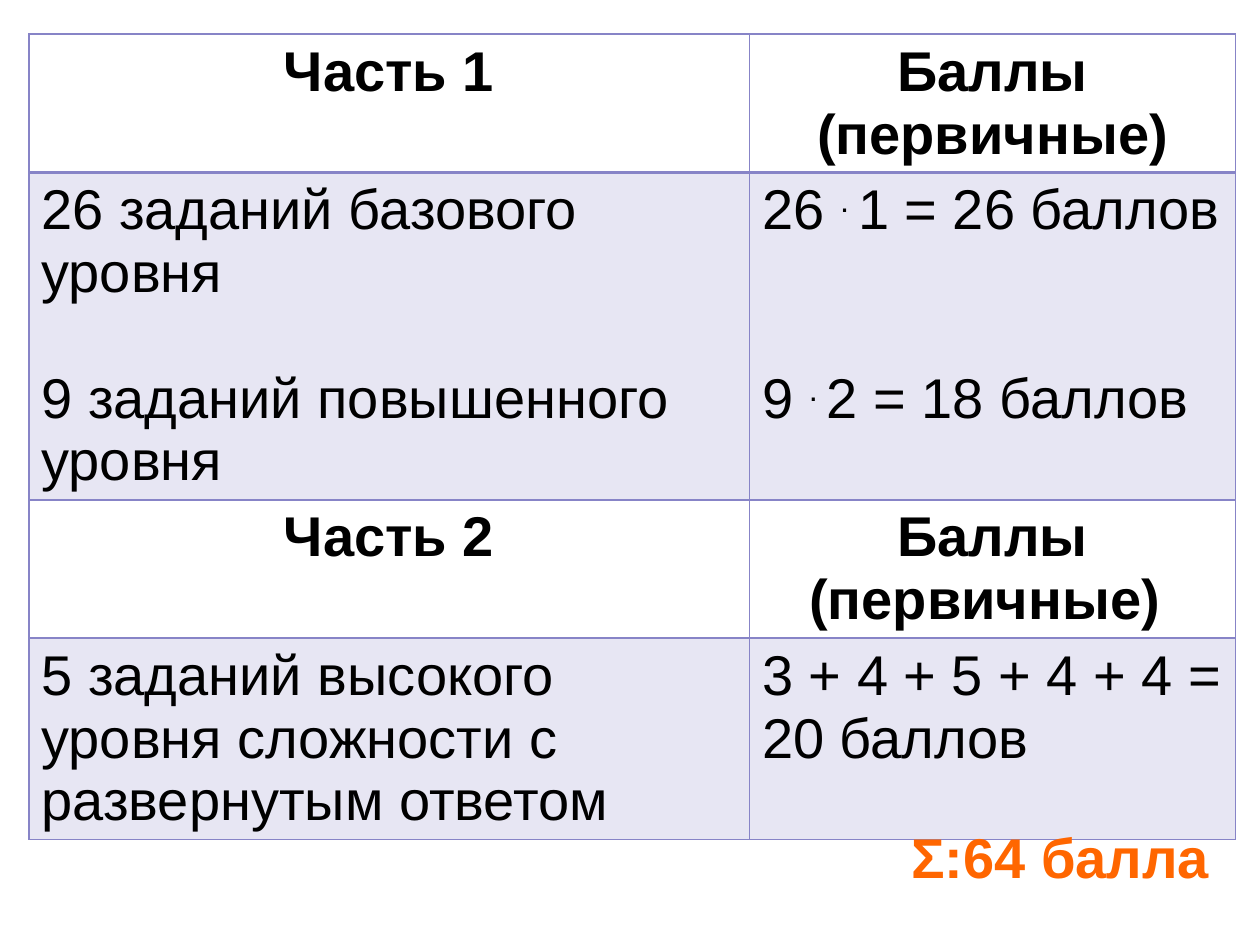
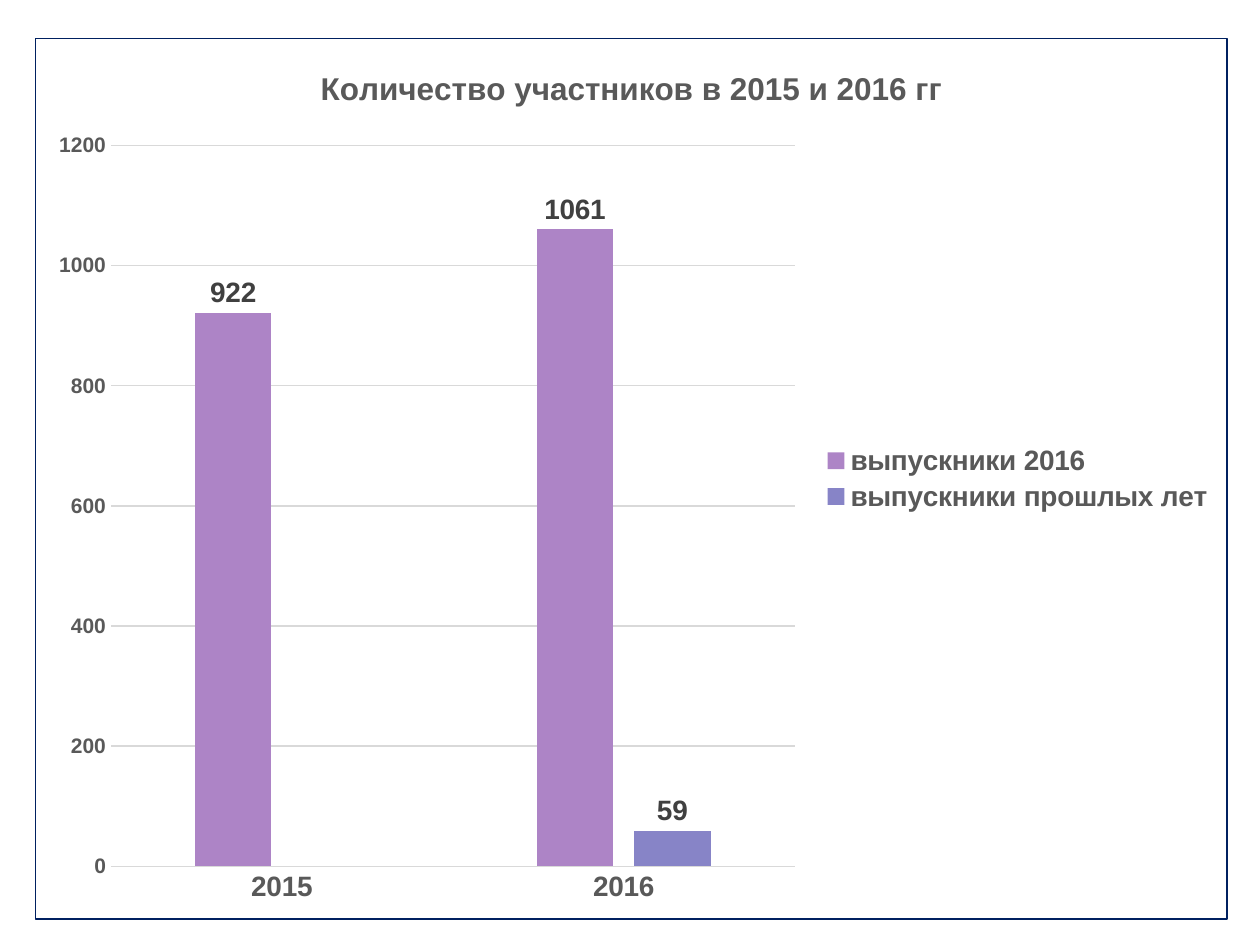
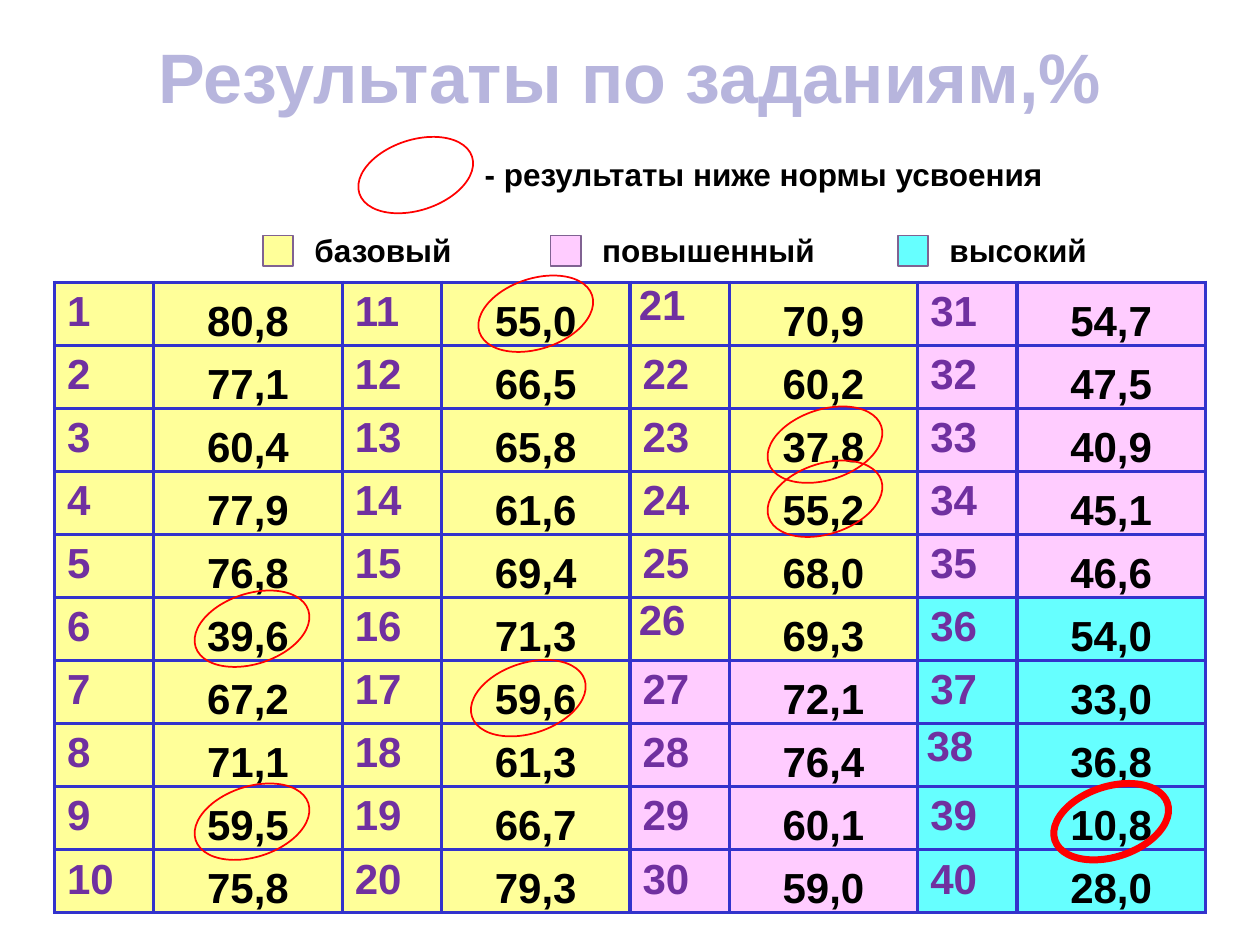
import pptx
import pptx.chart.data
import pptx.dml.color
import pptx.enum.chart
import pptx.enum.shapes
import pptx.enum.text
import pptx.oxml
import pptx.oxml.ns
import pptx.util

Cm = pptx.util.Cm
Pt = pptx.util.Pt
RGBColor = pptx.dml.color.RGBColor
qn = pptx.oxml.ns.qn
PP_ALIGN = pptx.enum.text.PP_ALIGN
MSO_ANCHOR = pptx.enum.text.MSO_ANCHOR
MSO_SHAPE = pptx.enum.shapes.MSO_SHAPE

FONT = "Arial"
BLACK = RGBColor(0x00, 0x00, 0x00)
VIOLET = RGBColor(0x87, 0x84, 0xC7)
MAUVE = RGBColor(0xAD, 0x84, 0xC6)
LAVENDER = RGBColor(0xB7, 0xB5, 0xDD)
ORANGE = RGBColor(0xFF, 0x66, 0x00)
NAVY = RGBColor(0x00, 0x20, 0x60)
DARK_GREY = RGBColor(0x40, 0x40, 0x40)
GREY = RGBColor(0x59, 0x59, 0x59)
GRID_GREY = RGBColor(0xD9, 0xD9, 0xD9)
PURPLE = RGBColor(0x70, 0x30, 0xA0)
BLUE = RGBColor(0x33, 0x33, 0xCC)
PLUM = RGBColor(0x80, 0x62, 0x92)
RED = RGBColor(0xFF, 0x00, 0x00)
YELLOW = RGBColor(0xFF, 0xFF, 0x99)
PINK = RGBColor(0xFF, 0xCC, 0xFF)
CYAN = RGBColor(0x66, 0xFF, 0xFF)

SCORES = [
    "80,8", "77,1", "60,4", "77,9", "76,8", "39,6", "67,2", "71,1", "59,5", "75,8",
    "55,0", "66,5", "65,8", "61,6", "69,4", "71,3", "59,6", "61,3", "66,7", "79,3",
    "70,9", "60,2", "37,8", "55,2", "68,0", "69,3", "72,1", "76,4", "60,1", "59,0",
    "54,7", "47,5", "40,9", "45,1", "46,6", "54,0", "33,0", "36,8", "10,8", "28,0",
]
TASK_ROWS = 10
TIGHT_TASKS = (21, 26, 38)
LOW_SCORES = [
    (6, 0.08, 0, 1), (9, 0.08, 0.08, 1), (11, 0, 0, 1), (17, -0.15, 0.13, 1),
    (23, 0.03, 0.1, 1), (24, 0.03, -0.08, 1), (39, 0, 0.08, 4),
]
OVAL_W, OVAL_H = 2.39, 1.42


def style_font(font, size, color, bold=True):
    font.name = FONT
    font.size = Pt(size)
    font.bold = bold
    font.color.rgb = color


def style_paragraph(p, size, color, bold=True, align=PP_ALIGN.LEFT):
    p.alignment = align
    for r in p.runs:
        style_font(r.font, size, color, bold)


def line_xml(tag, color, width):
    return pptx.oxml.parse_xml(
        f'<{tag} xmlns:a="http://schemas.openxmlformats.org/drawingml/2006/main" '
        f'w="{Pt(width)}"><a:solidFill><a:srgbClr val="{color}"/></a:solidFill></{tag}>')


def set_borders(cell, color, width, bottom=None):
    tcPr = cell._tc.get_or_add_tcPr()
    for i, side in enumerate("LRTB"):
        side_width = bottom if side == "B" and bottom else width
        tcPr.insert(i, line_xml(f"a:ln{side}", color, side_width))


def add_text(s, box, text, size, color, align=PP_ALIGN.LEFT, wrap=True):
    tb = s.shapes.add_textbox(*map(Cm, box))
    tf = tb.text_frame
    tf.text = text
    tf.word_wrap = wrap
    tf.auto_size = pptx.enum.text.MSO_AUTO_SIZE.SHAPE_TO_FIT_TEXT
    style_paragraph(tf.paragraphs[0], size, color, align=align)


def add_plain_table(s, left, top, widths, heights):
    frame = s.shapes.add_table(len(heights), len(widths), Cm(left), Cm(top),
                               Cm(sum(widths)), Cm(sum(heights)))
    table = frame.table
    table.first_row = table.horz_banding = False
    for col, width in zip(table.columns, widths):
        col.width = Cm(width)
    for row, height in zip(table.rows, heights):
        row.height = Cm(height)
    return table


def add_outline(s, kind, box, color, width, fill=None):
    sp = s.shapes.add_shape(kind, *map(Cm, box))
    sp.shadow.inherit = False
    sp.line.color.rgb = color
    sp.line.width = Pt(width)
    if fill is None:
        sp.fill.background()
    else:
        sp.fill.solid()
        sp.fill.fore_color.rgb = fill
    return sp


def add_oval(s, center_x, center_y, width):
    box = (center_x - OVAL_W / 2, center_y - OVAL_H / 2, OVAL_W, OVAL_H)
    add_outline(s, MSO_SHAPE.OVAL, box, RED, width).rotation = 341.9


def fill_points_cell(cell, paragraphs, header):
    tf = cell.text_frame
    for i, (text, space) in enumerate(paragraphs):
        p = tf.paragraphs[0] if i == 0 else tf.add_paragraph()
        p.space_before = Pt(space)
        for piece in text.split("|"):
            r = p.add_run()
            r.text = piece
            if piece == ". ":
                r._r.get_or_add_rPr().set("baseline", "30000")
        style_paragraph(p, 32, BLACK, header, PP_ALIGN.CENTER if header else PP_ALIGN.LEFT)
    if header:
        cell.fill.background()
    else:
        cell.fill.solid()
        cell.fill.fore_color.rgb = VIOLET
        color = cell._tc.tcPr.find(".//" + qn("a:srgbClr"))
        color.append(color.makeelement(qn("a:alpha"), {"val": "20000"}))


def build_points_slide(s, left, top):
    rows = [
        ([("Часть 1", 0)], [("Баллы (первичные)", 0)]),
        ([("26 заданий базового уровня", 0), ("9 заданий повышенного уровня", 36)],
         [("26 |. |1 = 26 баллов", 0), ("9 |. |2 = 18 баллов", 72)]),
        ([("Часть 2", 0)], [("Баллы (первичные) ", 0)]),
        ([("5 заданий высокого уровня сложности с развернутым ответом", 0)],
         [("3 + 4 + 5 + 4 + 4 =", 0), ("20 баллов", 0)]),
    ]
    table = add_plain_table(s, left, top, [14.53, 9.8], [2.78, 6.6, 2.78, 4.06])
    for i, row in enumerate(rows):
        for j, paragraphs in enumerate(row):
            cell = table.cell(i, j)
            fill_points_cell(cell, paragraphs, header=i % 2 == 0)
            set_borders(cell, VIOLET, 1, bottom=2 if i == 0 else None)
    add_text(s, (left + 17.48, top + 15.77, 6.63, 1.62), "Ʃ:64 балла", 32, ORANGE,
             PP_ALIGN.CENTER, wrap=False)


def build_chart_slide(s, box):
    data = pptx.chart.data.CategoryChartData()
    data.categories = ["2015", "2016"]
    data.add_series("выпускники 2016", (922, 1061))
    data.add_series("выпускники прошлых лет", (None, 59))
    kind = pptx.enum.chart.XL_CHART_TYPE.COLUMN_CLUSTERED
    chart = s.shapes.add_chart(kind, *map(Cm, box), data).chart
    style_font(chart.font, 10, BLACK, False)

    chart.has_title = True
    tf = chart.chart_title.text_frame
    tf.text = "Количество участников в 2015 и 2016 гг"
    style_paragraph(tf.paragraphs[0], 18, GREY, align=PP_ALIGN.CENTER)

    chart.has_legend = True
    chart.legend.position = pptx.enum.chart.XL_LEGEND_POSITION.RIGHT
    chart.legend.include_in_layout = False
    style_font(chart.legend.font, 16, GREY)

    for axis, size in ((chart.category_axis, 16), (chart.value_axis, 12)):
        axis.major_tick_mark = axis.minor_tick_mark = pptx.enum.chart.XL_TICK_MARK.NONE
        style_font(axis.tick_labels.font, size, GREY)
    chart.value_axis.format.line.fill.background()
    for line in (chart.category_axis.format.line, chart.value_axis.major_gridlines.format.line):
        line.color.rgb = GRID_GREY
        line.width = Pt(0.75)

    plot = chart.plots[0]
    plot.vary_by_categories = False
    plot.gap_width = 219
    plot.overlap = -27
    for series, color in zip(plot.series, (MAUVE, VIOLET)):
        series.format.fill.solid()
        series.format.fill.fore_color.rgb = color
        labels = series.data_labels
        labels.show_value = True
        labels.position = pptx.enum.chart.XL_LABEL_POSITION.OUTSIDE_END
        style_font(labels.font, 16, DARK_GREY)

    body = chart._chartSpace.find(qn("c:chart"))
    spPr = body.makeelement(qn("c:spPr"), {})
    spPr.append(line_xml("a:ln", NAVY, 0.75))
    body.addnext(spPr)


def level_color(task):
    if task <= 26:
        return YELLOW
    return PINK if task <= 35 else CYAN


def set_insets(cell, side, top):
    cell.margin_left = cell.margin_right = Cm(side)
    cell.margin_top = Cm(top)
    cell.margin_bottom = 0


def add_score_table(s, left, top):
    number_w, score_w, row_h = 2, 3.8, 1.27
    groups = len(SCORES) // TASK_ROWS
    table = add_plain_table(s, left, top, [number_w, score_w] * groups, [row_h] * TASK_ROWS)
    for task, score in enumerate(SCORES, 1):
        group, row = divmod(task - 1, TASK_ROWS)
        number_cell, score_cell = (table.cell(row, 2 * group + k) for k in (0, 1))
        number_cell.text_frame.text = str(task)
        style_paragraph(number_cell.text_frame.paragraphs[0], 24, PURPLE)
        if task in TIGHT_TASKS:
            set_insets(number_cell, 0.18, 0)
        score_cell.text_frame.text = score
        style_paragraph(score_cell.text_frame.paragraphs[0], 24, BLACK, align=PP_ALIGN.CENTER)
        score_cell.vertical_anchor = MSO_ANCHOR.BOTTOM
        set_insets(score_cell, 0.03, 0.03)
        for cell in (number_cell, score_cell):
            cell.fill.solid()
            cell.fill.fore_color.rgb = level_color(task)
            set_borders(cell, BLUE, 2.25)
    for task, dx, dy, width in LOW_SCORES:
        group, row = divmod(task - 1, TASK_ROWS)
        center_x = left + group * (number_w + score_w) + number_w + score_w / 2
        add_oval(s, center_x + dx, top + (row + 0.5) * row_h + dy, width)


def add_score_key(s, left, top):
    add_oval(s, left + 3.08, top + 0.71, 1)
    add_text(s, (left + 4.22, top + 0.18, 11.86, 1.02),
             "- результаты ниже нормы усвоения", 18, BLACK)
    levels = [("базовый", YELLOW, 0, 4.39), ("повышенный", PINK, 5.8, 5),
              ("высокий", CYAN, 12.8, 4.39)]
    for name, color, x, width in levels:
        add_outline(s, MSO_SHAPE.RECTANGLE, (left + x, top + 1.93, 0.61, 0.61), PLUM, 1, color)
        add_text(s, (left + x + 0.79, top + 1.72, width, 1.02), name, 18, BLACK)


def build_scores_slide(s, left, top):
    add_text(s, (left + 1.54, top, 20.12, 1.96), "Результаты по заданиям,%", 40, LAVENDER,
             PP_ALIGN.CENTER, wrap=False)
    add_score_table(s, left, top + 5.13)
    add_score_key(s, left + 4.2, top + 2.26)


def main():
    prs = pptx.Presentation()
    prs.slide_width, prs.slide_height = Cm(25.4), Cm(19.05)
    points, participants, scores = (
        prs.slides.add_slide(prs.slide_layouts[6]) for _ in range(3))
    build_points_slide(points, 0.58, 0.69)
    build_chart_slide(participants, (0.7, 0.76, 24.05, 17.78))
    build_scores_slide(scores, 1.1, 0.56)
    prs.save("out.pptx")


if __name__ == "__main__":
    main()
